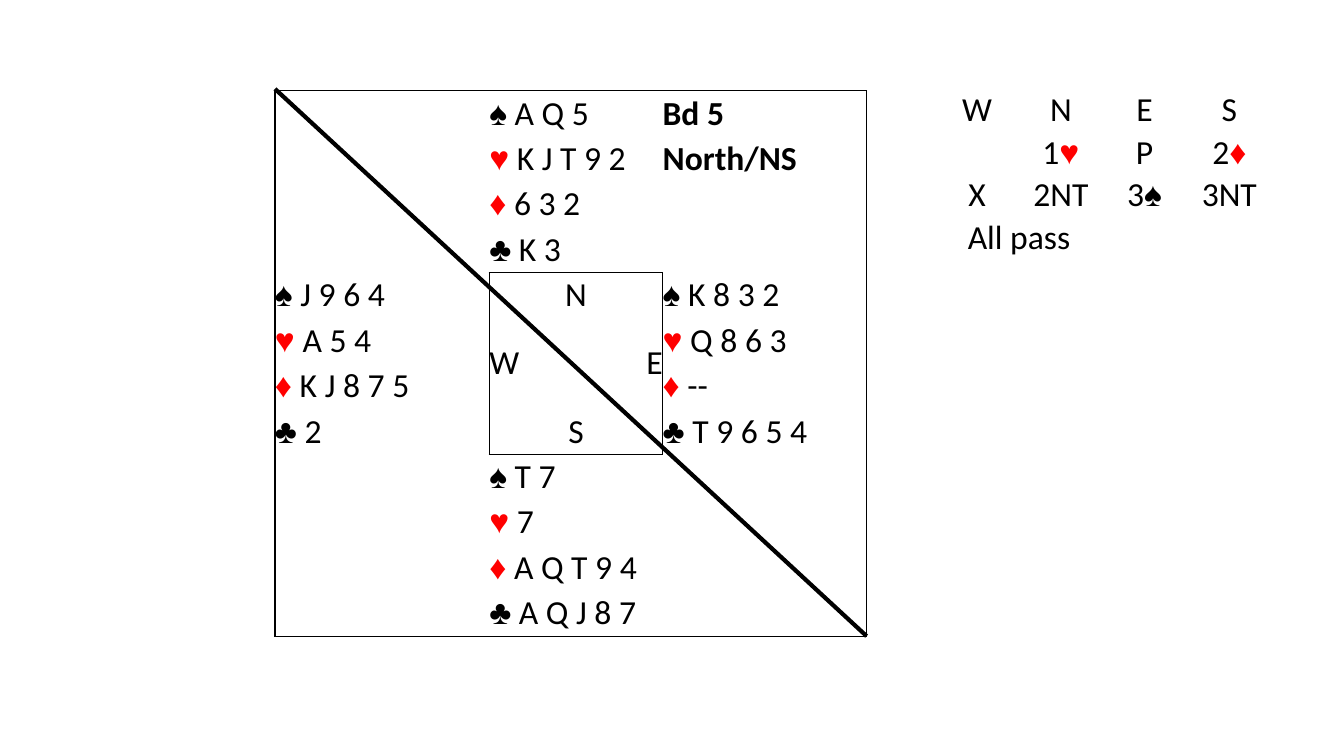
from itertools import groupby, product

from lxml import etree
from pptx import Presentation
from pptx import util as u
from pptx.dml.color import RGBColor
from pptx.enum import shapes, text
from pptx.oxml import ns

COLORS = {"ink": "000000", "red": "FF0000"}
SUITS = "♠♥♦♣"
LEFT, CENTER, RIGHT = text.PP_ALIGN.LEFT, text.PP_ALIGN.CENTER, text.PP_ALIGN.RIGHT

NORTH = ["A Q 5", "K J T 9 2", "6 3 2", "K 3"]
WEST = ["J 9 6 4", "A 5 4", "K J 8 7 5", "2"]
EAST = ["K 8 3 2", "Q 8 6 3", "--", "T 9 6 5 4"]
SOUTH = ["T 7", "7", "A Q T 9 4", "A Q J 8 7"]
BIDDING = [
    ["W", "N", "E", "S"],
    ["", "1♥", "P", "2♦"],
    ["X", "2NT", "3♠", "3NT"],
    ["All pass", "", "", ""],
]


def write(cell, content, align=LEFT, bold=False):
    line = cell.text_frame.paragraphs[0]
    line.alignment = align
    for is_suit, letters in groupby(content, lambda letter: letter in SUITS):
        run = line.add_run()
        run.text = "".join(letters)
        style = {"name": "Arial" if is_suit else "Calibri", "size": u.Pt(24), "bold": bold}
        for key, value in style.items():
            setattr(run.font, key, value)
        color = "red" if run.text in "♥♦" else "ink"
        run.font.color.rgb = RGBColor.from_string(COLORS[color])


def border(cell, side, drawn):
    edge = etree.SubElement(cell._tc.get_or_add_tcPr(), ns.qn(f"a:ln{side}"), w=str(u.Pt(1)))
    if drawn:
        fill = etree.SubElement(edge, ns.qn("a:solidFill"))
        etree.SubElement(fill, ns.qn("a:srgbClr"), val=COLORS["ink"])
    else:
        etree.SubElement(edge, ns.qn("a:noFill"))


def add_grid(slide, box, rows, widths):
    left, top, width, height = map(u.Cm, box)
    grid = slide.shapes.add_table(rows, len(widths), left, top, width, height).table
    for flag in ("first_row", "horz_banding"):
        setattr(grid, flag, False)
    for column, column_width in zip(grid.columns, widths):
        column.width = u.Cm(column_width)
    return grid


def finish(grid, margin, frames=()):
    layout = {"vertical_anchor": text.MSO_ANCHOR.MIDDLE}
    layout |= {f"margin_{side}": u.Cm(margin) for side in ("left", "right", "top", "bottom")}

    def across(y, column):
        return any(y in (t, b) and l <= column < r for l, t, r, b in frames)

    def down(x, row):
        return any(x in (l, r) and t <= row < b for l, t, r, b in frames)

    for row, column in product(range(len(grid.rows)), range(len(grid.columns))):
        cell = grid.cell(row, column)
        for key, value in layout.items():
            setattr(cell, key, value)
        merged = cell.is_merge_origin
        right = column + (cell.span_width if merged else 1)
        bottom = row + (cell.span_height if merged else 1)
        border(cell, "L", down(column, row))
        border(cell, "R", down(right, row))
        border(cell, "T", across(row, column))
        border(cell, "B", across(bottom, column))
        cell.fill.background()


def add_deal(slide, box):
    left, top, width, height = box
    deal = add_grid(slide, box, 12, [5.4, 2.2, 2.17, 5.14])
    for row in (0, 1, 2, 3, 4, 7, 8, 9, 10, 11):
        deal.cell(row, 1).merge(deal.cell(row, 2))
    for column in (1, 2):
        deal.cell(5, column).merge(deal.cell(6, column))

    for hand, row, column in ((NORTH, 0, 1), (WEST, 4, 0), (EAST, 4, 3), (SOUTH, 8, 1)):
        for offset, (suit, cards) in enumerate(zip(SUITS, hand)):
            write(deal.cell(row + offset, column), f"{suit} {cards}")
    for seat, row, column, align in (
        ("N", 4, 1, CENTER), ("W", 5, 1, LEFT), ("E", 5, 2, RIGHT), ("S", 7, 1, CENTER)
    ):
        write(deal.cell(row, column), seat, align)
    for row, heading in enumerate(("Bd 5", "North/NS")):
        write(deal.cell(row, 3), heading, bold=True)
    finish(deal, 0, frames=[(0, 0, 4, 12), (1, 4, 3, 8)])

    diagonal = slide.shapes.add_connector(
        shapes.MSO_CONNECTOR.STRAIGHT,
        u.Cm(left), u.Cm(top - 0.05), u.Cm(left + width), u.Cm(top + height),
    )
    diagonal.line.width = u.Pt(3)
    diagonal.line.color.rgb = RGBColor.from_string(COLORS["ink"])
    etree.SubElement(diagonal._element.spPr, ns.qn("a:effectLst"))


def add_bidding(slide, box):
    bidding = add_grid(slide, box, len(BIDDING), [2.11, 2.11, 2.11, 2.16])
    bidding.cell(3, 0).merge(bidding.cell(3, 1))
    for row, calls in enumerate(BIDDING):
        for column, call in enumerate(calls):
            if call:
                write(bidding.cell(row, column), call, CENTER)
    finish(bidding, 0.02)


def main():
    deck = Presentation()
    deck.slide_width, deck.slide_height = u.Cm(33.87), u.Cm(19.05)
    slide = deck.slides.add_slide(deck.slide_layouts[6])
    add_deal(slide, (6.93, 2.29, 14.91, 13.74))
    add_bidding(slide, (23.57, 2.24, 8.49, 4.24))
    deck.save("out.pptx")


if __name__ == "__main__":
    main()
